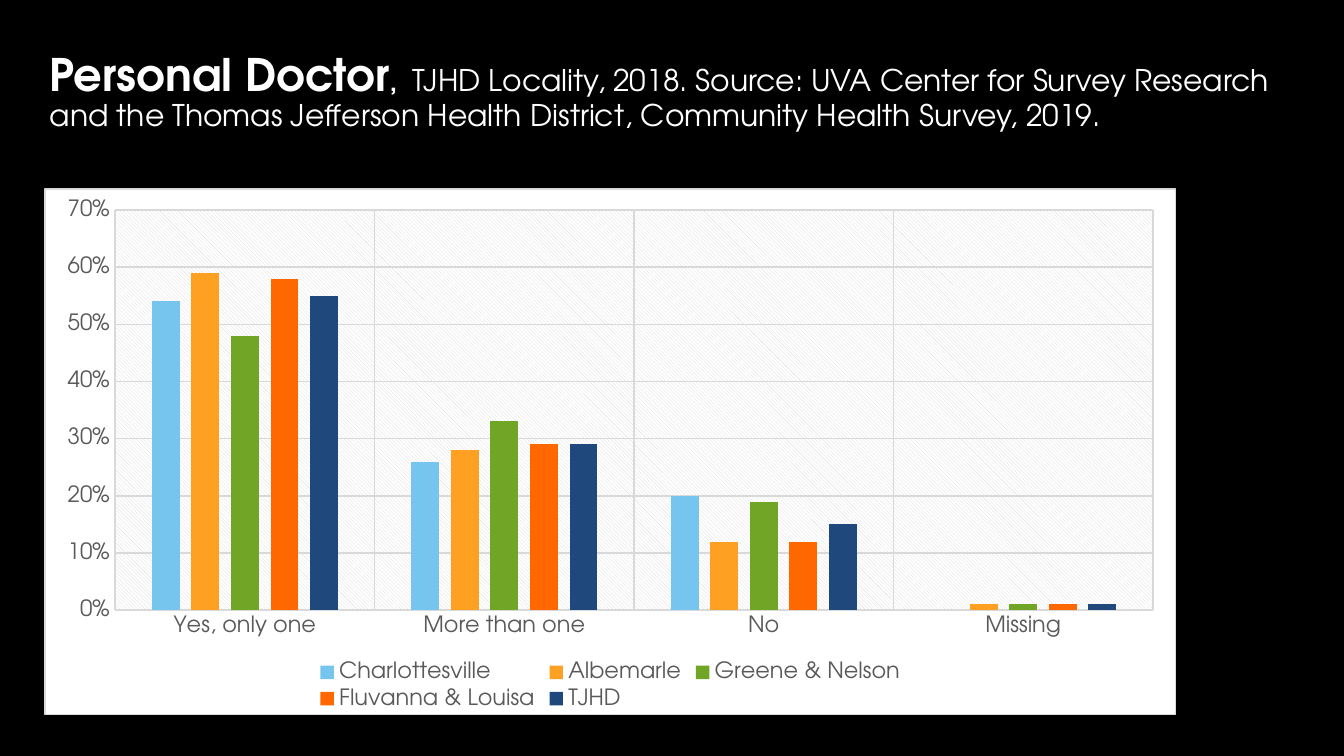
import pptx
import pptx.chart.data
import pptx.dml.color
import pptx.enum.chart
import pptx.enum.text
import pptx.oxml
import pptx.oxml.ns
import pptx.util

Cm = pptx.util.Cm
Pt = pptx.util.Pt
FACE = "TeX Gyre Adventor"
HUES = {"back": "000000", "text": "FFFFFF", "label": "595959", "grid": "D9D9D9", "panel": "FFFFFF"}
TITLE = [
    ("Personal Doctor", 24, True),
    (", ", 14, True),
    (" TJHD Locality, 2018. Source: UVA Center for Survey Research and the Thomas Jefferson "
     "Health District, Community Health Survey, 2019.", 16, False),
]
CATS = ["Yes, only one", "More than one", "No", "Missing"]
ROWS = [
    ("Charlottesville", (0.54, 0.26, 0.2, None), "76C5EF"),
    ("Albemarle", (0.59, 0.28, 0.12, 0.01), "FEA022"),
    ("Greene & Nelson", (0.48, 0.33, 0.19, 0.01), "70A525"),
    ("Fluvanna & Louisa", (0.58, 0.29, 0.12, 0.01), "FF6700"),
    ("TJHD", (0.55, 0.29, 0.15, 0.01), "1F497D"),
]


def paint(fill, hue):
    fill.solid()
    fill.fore_color.rgb = pptx.dml.color.RGBColor.from_string(hue)


def style(font, size, hue):
    font.name = FACE
    font.size = Pt(size)
    font.color.rgb = pptx.dml.color.RGBColor.from_string(hue)


def rule(line):
    paint(line.fill, HUES["grid"])
    line.width = Pt(0.75)


def solid(hue):
    return f'<a:solidFill><a:srgbClr val="{hue}"/></a:solidFill>'


def props(body):
    spaces = pptx.oxml.ns.nsdecls("c", "a")
    return pptx.oxml.parse_xml(f"<c:spPr {spaces}>{body}</c:spPr>")


def add_title(slide):
    title = slide.shapes.title
    title.left, title.top, title.width, title.height = Cm(0.84), Cm(0.89), Cm(23.7), Cm(2.34)
    paint(title.fill, HUES["back"])
    frame = title.text_frame
    frame.word_wrap = True
    frame.auto_size = pptx.enum.text.MSO_AUTO_SIZE.NONE
    frame.vertical_anchor = pptx.enum.text.MSO_ANCHOR.TOP
    frame.margin_left = frame.margin_right = frame.margin_top = frame.margin_bottom = Cm(0.1)
    para = frame.paragraphs[0]
    para.alignment = pptx.enum.text.PP_ALIGN.LEFT
    para.line_spacing = 0.9
    for text, size, bold in TITLE:
        run = para.add_run()
        run.text = text
        style(run.font, size, HUES["text"])
        run.font.bold = bold


def add_bars(slide):
    data = pptx.chart.data.CategoryChartData(number_format="0%")
    data.categories = CATS
    for name, vals, hue in ROWS:
        data.add_series(name, vals)
    kind = pptx.enum.chart.XL_CHART_TYPE.COLUMN_CLUSTERED
    chart = slide.shapes.add_chart(kind, Cm(0.84), Cm(3.56), Cm(21.39), Cm(9.96), data).chart
    chart.has_title = False
    style(chart.font, 10, HUES["text"])

    plot = chart.plots[0]
    plot.gap_width = 267
    plot.overlap = -43
    plot.vary_by_categories = False
    for bar, (name, vals, hue) in zip(plot.series, ROWS):
        paint(bar.format.fill, hue)

    for axis in (chart.category_axis, chart.value_axis):
        axis.major_tick_mark = axis.minor_tick_mark = pptx.enum.chart.XL_TICK_MARK.NONE
        axis.has_major_gridlines = True
        rule(axis.major_gridlines.format.line)
        style(axis.tick_labels.font, 12, HUES["label"])
    rule(chart.category_axis.format.line)
    scale = chart.value_axis
    scale.format.line.fill.background()
    scale.minimum_scale, scale.maximum_scale, scale.major_unit = 0, 0.7, 0.1
    scale.tick_labels.number_format = "0%"
    scale.tick_labels.number_format_is_linked = False

    chart.has_legend = True
    chart.legend.position = pptx.enum.chart.XL_LEGEND_POSITION.BOTTOM
    chart.legend.include_in_layout = False
    style(chart.legend.font, 12, HUES["label"])

    space = chart.element
    border = f'<a:ln w="9525">{solid(HUES["grid"])}</a:ln>'
    space.find(pptx.oxml.ns.qn("c:chart")).addnext(props(solid(HUES["panel"]) + border))
    area = space.find(".//" + pptx.oxml.ns.qn("c:plotArea"))
    area.append(props(
        f'<a:pattFill prst="ltDnDiag"><a:fgClr><a:srgbClr val="{HUES["grid"]}"/></a:fgClr>'
        f'<a:bgClr><a:srgbClr val="{HUES["panel"]}"/></a:bgClr></a:pattFill><a:ln><a:noFill/></a:ln>'))


def main():
    deck = pptx.Presentation()
    deck.slide_width, deck.slide_height = Cm(25.4), Cm(14.29)
    slide = deck.slides.add_slide(deck.slide_layouts[5])
    paint(slide.background.fill, HUES["back"])
    add_title(slide)
    add_bars(slide)
    deck.save("out.pptx")


if __name__ == "__main__":
    main()
